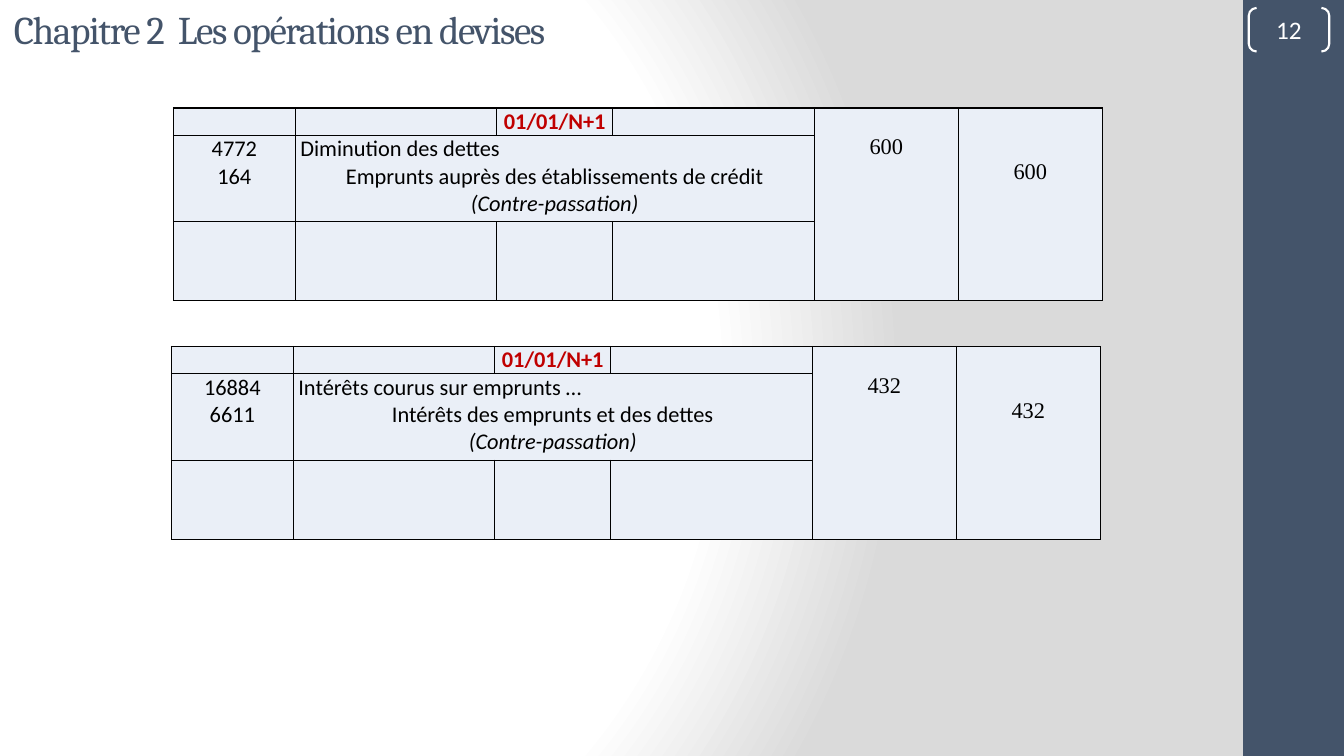
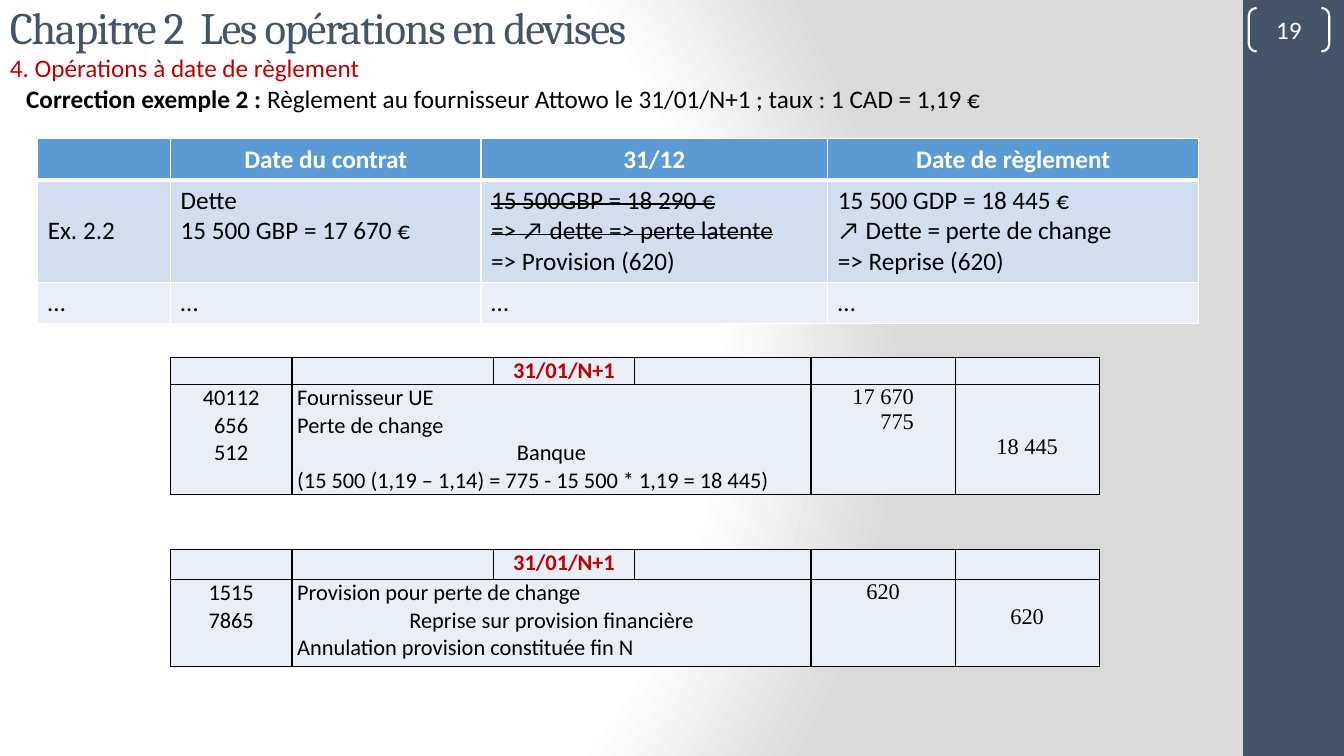
import dataclasses

import pptx
import pptx.dml.color
import pptx.enum.shapes
import pptx.enum.text
import pptx.oxml
import pptx.oxml.ns
import pptx.util

Cm = pptx.util.Cm
Pt = pptx.util.Pt
RGBColor = pptx.dml.color.RGBColor
ALIGN = pptx.enum.text.PP_ALIGN
ANCHOR = pptx.enum.text.MSO_ANCHOR
SHAPE = pptx.enum.shapes.MSO_SHAPE

NAVY = RGBColor(0x44, 0x54, 0x6A)
RED = RGBColor(0xC0, 0x00, 0x00)
BLACK = RGBColor(0x00, 0x00, 0x00)
WHITE = RGBColor(0xFF, 0xFF, 0xFF)
GREY = RGBColor(0xDA, 0xDA, 0xDA)
BLUE = RGBColor(0x5B, 0x9B, 0xD5)
PALE = RGBColor(0xD2, 0xDE, 0xEF)
MIST = RGBColor(0xEA, 0xEF, 0xF7)

SANS = "Calibri"
SERIF = "Cambria"
ROMAN = "Times New Roman"
CHAPTER = "Chapitre 2  Les opérations en devises"

BACK = f"""<p:bg {pptx.oxml.ns.nsdecls("p", "a")}><p:bgPr>
<a:gradFill rotWithShape="1"><a:gsLst>
<a:gs pos="0"><a:srgbClr val="{WHITE}"/></a:gs>
<a:gs pos="75000"><a:srgbClr val="{WHITE}"/></a:gs>
<a:gs pos="100000"><a:srgbClr val="{GREY}"/></a:gs>
</a:gsLst><a:path path="circle">
<a:fillToRect l="20000" t="50000" r="100000" b="50000"/>
</a:path></a:gradFill><a:effectLst/></p:bgPr></p:bg>"""


@dataclasses.dataclass
class Line:
    text: str = ""
    size: float = 16
    align: int = ALIGN.LEFT
    ink: RGBColor = BLACK
    face: str = SANS
    bold: bool = False
    slant: bool = False
    strike: bool = False
    tight: bool = False
    lead: str = ""


def mid(text, **style):
    return Line(text, align=ALIGN.CENTER, **style)


class Deck:
    def __init__(self):
        self.show = pptx.Presentation()
        self.show.slide_width = Cm(33.87)
        self.show.slide_height = Cm(19.05)
        self.slide = None

    def page(self, number):
        self.slide = self.show.slides.add_slide(self.show.slide_layouts[6])
        self.slide.element.cSld.insert(0, pptx.oxml.parse_xml(BACK))
        band = self.shape(SHAPE.RECTANGLE, 31.33, 0, 2.54, 19.05)
        band.fill.solid()
        band.fill.fore_color.rgb = NAVY
        band.line.fill.background()
        badge = self.shape(SHAPE.DOUBLE_BRACKET, 31.47, 0.2, 2.03, 1.1)
        badge.adjustments[0] = 0.18
        badge.fill.background()
        badge.line.color.rgb = WHITE
        badge.line.width = Pt(1.5)
        frame = badge.text_frame
        frame.margin_left = frame.margin_right = 0
        frame.margin_top = frame.margin_bottom = 0
        frame.vertical_anchor = ANCHOR.MIDDLE
        self.words(frame, [mid(number, size=18, ink=WHITE)])

    def shape(self, kind, left, top, width, height):
        item = self.slide.shapes.add_shape(
            kind, Cm(left), Cm(top), Cm(width), Cm(height))
        item.shadow.inherit = False
        return item

    def words(self, frame, lines):
        for i, line in enumerate(lines):
            para = frame.add_paragraph() if i else frame.paragraphs[0]
            para.alignment = line.align
            font = para.font
            font.size = Pt(line.size)
            font.name = line.face
            font.bold = line.bold
            font.italic = line.slant
            font.color.rgb = line.ink
            if line.lead:
                lead = para.add_run()
                lead.text = line.lead
                lead.font.bold = True
            if line.text:
                run = para.add_run()
                run.text = line.text
                props = run._r.get_or_add_rPr()
                if line.strike:
                    props.set("strike", "sngStrike")
                if line.tight:
                    props.set("spc", "-100")

    def label(self, left, top, height, line):
        box = self.slide.shapes.add_textbox(
            Cm(left), Cm(top), Cm(30), Cm(height))
        box.text_frame.word_wrap = True
        box.text_frame.vertical_anchor = ANCHOR.MIDDLE
        self.words(box.text_frame, [line])

    def title(self, left, top, size):
        self.label(left, top, 1.57, Line(
            CHAPTER, size=size, ink=NAVY, face=SERIF, tight=True))

    def grid(self, left, top, widths, heights):
        table = self.slide.shapes.add_table(
            len(heights), len(widths), Cm(left), Cm(top),
            Cm(sum(widths)), Cm(sum(heights))).table
        table.first_row = table.horz_banding = False
        for col, width in zip(table.columns, widths):
            col.width = Cm(width)
        for row, height in zip(table.rows, heights):
            row.height = Cm(height)
        return table

    def paint(self, cell, fill, edge, base=1):
        props = cell._tc.get_or_add_tcPr()
        for side, width in zip("LRTB", (1, 1, 1, base)):
            props.append(pptx.oxml.parse_xml(
                f'<a:ln{side} {pptx.oxml.ns.nsdecls("a")} w="{Pt(width)}">'
                f'<a:solidFill><a:srgbClr val="{edge}"/></a:solidFill>'
                f'</a:ln{side}>'))
        cell.fill.solid()
        cell.fill.fore_color.rgb = fill

    def journal(self, left, top, heights, dated, date, codes, texts,
                debits, credits, drop, tall=False):
        widths = [3.07, 5.08, dated, 8 - dated, 3.63, 3.63]
        table = self.grid(left, top, widths, heights)
        for cell in table.iter_cells():
            self.paint(cell, MIST, BLACK)
            cell.margin_left = cell.margin_right = Cm(0.13)
            cell.margin_top = cell.margin_bottom = 0
        table.cell(1, 1).merge(table.cell(1, 3))
        first = 0 if tall else 1
        if tall:
            for col in (4, 5):
                table.cell(0, col).merge(table.cell(len(heights) - 1, col))
        side = ALIGN.RIGHT if len(debits) > 1 else ALIGN.CENTER
        debit, credit = table.cell(first, 4), table.cell(first, 5)
        if side == ALIGN.RIGHT:
            debit.margin_right = Cm(1.04)
        debit.margin_top = Cm(0.68 if tall else 0)
        credit.margin_top = debit.margin_top + Cm(drop)
        filled = {
            (0, 2): [mid(date, ink=RED, bold=True)],
            (1, 0): [mid(code) for code in codes],
            (1, 1): texts,
            (first, 4): [Line(v, align=side, face=ROMAN) for v in debits],
            (first, 5): [mid(v, face=ROMAN) for v in credits],
        }
        for row in range(len(heights)):
            for col in range(len(widths)):
                cell = table.cell(row, col)
                if not cell.is_spanned:
                    lines = filled.get((row, col), [Line(size=12)])
                    self.words(cell.text_frame, lines)

    def recap(self, left, top, widths, heights, rows):
        table = self.grid(left, top, widths, heights)
        for i, (row, fill) in enumerate(zip(rows, (BLUE, PALE, MIST))):
            for j, lines in enumerate(row):
                cell = table.cell(i, j)
                self.paint(cell, fill, WHITE, 1 if i else 3)
                if i == 0 or j == 0:
                    cell.vertical_anchor = ANCHOR.MIDDLE
                self.words(cell.text_frame, lines)


def main():
    deck = Deck()

    deck.page("12")
    deck.title(0.1, -0.05, 28)
    turns = [
        (4.37, 2.72, ["4772", "164"], "Diminution des dettes",
         "Emprunts auprès des établissements de crédit", "600"),
        (4.32, 8.73, ["16884", "6611"], "Intérêts courus sur emprunts …",
         "Intérêts des emprunts et des dettes", "432"),
    ]
    for left, top, codes, debit, credit, total in turns:
        texts = [Line(debit), mid(credit),
                 mid("(Contre-passation)", slant=True)]
        deck.journal(left, top, [0.69, 2.18, 1.95], 2.92, "01/01/N+1",
                     codes, texts, [total], [total], 0.63, tall=True)

    deck.page("19")
    deck.title(0, -0.12, 32)
    deck.label(0, 1.2, 1.02, Line(
        "4. Opérations à date de règlement", size=18, ink=RED))
    deck.label(0.41, 1.97, 1.02, Line(
        "Règlement au fournisseur Attowo le 31/01/N+1 ; "
        "taux : 1 CAD = 1,19 €", size=18, lead="Correction exemple 2 : "))

    def big(*texts):
        return [Line(text, size=18) for text in texts]

    heads = ["", "Date du contrat", "31/12", "Date de règlement"]
    deck.recap(0.95, 3.5, [3.35, 7.82, 8.74, 9.35], [1.04, 2.57, 1.04], [
        [[mid(head, size=18, ink=WHITE, bold=True)] for head in heads],
        [big("Ex. 2.2"),
         big("Dette", "15 500 GBP = 17 670 €"),
         [Line("15 500GBP = 18 290 €", size=18, strike=True),
          Line("=> ↗ dette => perte latente", size=18, strike=True),
          Line("=> Provision (620)", size=18)],
         big("15 500 GDP = 18 445 €", "↗ Dette = perte de change",
             "=> Reprise (620)")],
        [big("…") for head in heads],
    ])
    deck.journal(
        4.29, 9, [0.69, 2.78], 3.55, "31/01/N+1", ["40112", "656", "512"],
        [Line("Fournisseur UE"), Line("Perte de change"), mid("Banque"),
         Line("(15 500 (1,19 – 1,14) = 775 - 15 500 * 1,19 = 18 445)")],
        ["17 670", "775"], ["18 445"], 1.26)
    deck.journal(
        4.29, 13.84, [0.76, 2.2], 3.55, "31/01/N+1", ["1515", "7865"],
        [Line("Provision pour perte de change"),
         mid("Reprise sur provision financière"),
         Line("Annulation provision constituée fin N")],
        ["620"], ["620"], 0.63)

    deck.show.save("out.pptx")


if __name__ == "__main__":
    main()
